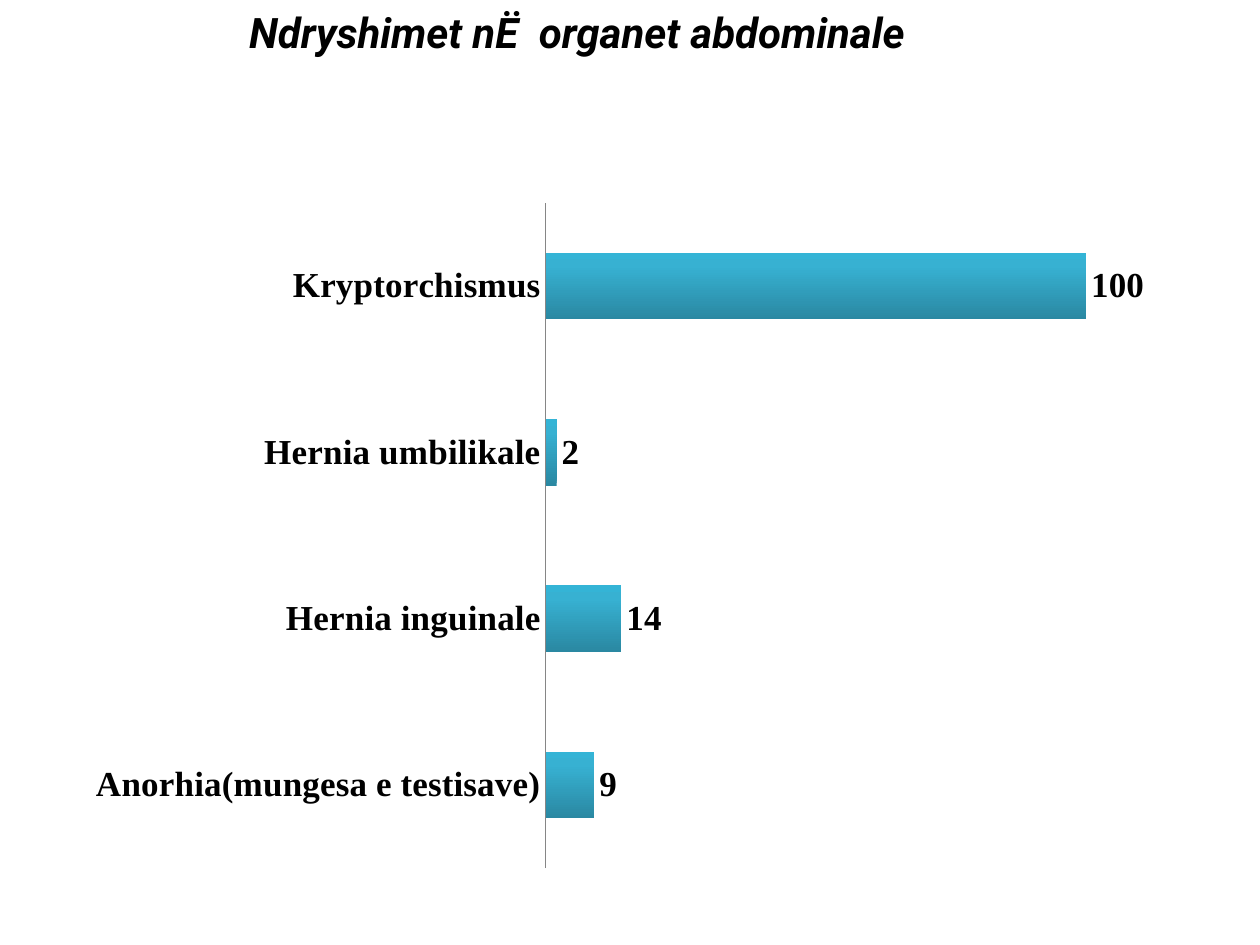
"""Build a slide with a bar chart of changes found in the abdominal organs."""
from copy import deepcopy

from pptx import Presentation
from pptx.chart.data import CategoryChartData
from pptx.dml.color import RGBColor
from pptx.enum import chart as ch, text
from pptx.util import Inches, Pt

BLACK = RGBColor(0x00, 0x00, 0x00)
AXIS_GRAY = RGBColor(0x86, 0x86, 0x86)
BAR_GRADIENT = [
    (0, RGBColor(0x2A, 0x88, 0xA2)),
    (0.8, RGBColor(0x37, 0xB1, 0xD2)),
    (1, RGBColor(0x34, 0xB4, 0xD6)),
]
FINDINGS = {
    "Anorhia(mungesa e testisave)": 9,
    "Hernia inguinale": 14,
    "Hernia umbilikale": 2,
    "Kryptorchismus": 100,
}


class SlideBuilder:
    title_font = "Roboto"
    label_font = "Times New Roman"
    chart_font = "Calibri"

    def __init__(self, slide):
        self.slide = slide

    def style(self, font, name, size, bold=False, italic=False):
        font.name, font.size = name, Pt(size)
        font.bold, font.italic = bold, italic
        font.color.rgb = BLACK

    def title(self, wording, left, top, width, height):
        heading = self.slide.shapes.title
        heading.left, heading.top = Inches(left), Inches(top)
        heading.width, heading.height = Inches(width), Inches(height)
        frame = heading.text_frame
        frame.text = wording
        frame.vertical_anchor = text.MSO_ANCHOR.TOP
        frame.auto_size = text.MSO_AUTO_SIZE.NONE
        paragraph = frame.paragraphs[0]
        paragraph.alignment = text.PP_ALIGN.CENTER
        self.style(paragraph.font, self.title_font, 24, bold=True, italic=True)

    def gradient(self, series, stops):
        fill = series.format.fill
        fill.gradient()
        fill.gradient_angle = 90
        stop_list = series._element.xpath(".//a:gsLst")[0]
        while len(stop_list) < len(stops):
            stop_list.append(deepcopy(stop_list[-1]))
        for stop, (position, color) in zip(fill.gradient_stops, stops):
            stop.position = position
            stop.color.rgb = color

    def bar_chart(self, values, left, top, width, height):
        data = CategoryChartData()
        data.categories = list(values)
        data.add_series("Series 1", list(values.values()))
        chart = self.slide.shapes.add_chart(
            ch.XL_CHART_TYPE.BAR_CLUSTERED,
            Inches(left), Inches(top), Inches(width), Inches(height), data,
        ).chart
        chart.has_title = chart.has_legend = False
        self.style(chart.font, self.chart_font, 10)

        categories = chart.category_axis
        categories.major_tick_mark = ch.XL_TICK_MARK.NONE
        categories.has_major_gridlines = False
        categories.format.line.color.rgb = AXIS_GRAY
        categories.format.line.width = Pt(0.75)
        self.style(categories.tick_labels.font, self.label_font, 20, bold=True)
        chart.value_axis.visible = False
        chart.value_axis.has_major_gridlines = False

        plot = chart.plots[0]
        plot.gap_width, plot.overlap = 150, -25
        plot.vary_by_categories = False
        plot.has_data_labels = True
        labels = plot.data_labels
        labels.show_value = True
        labels.position = ch.XL_LABEL_POSITION.OUTSIDE_END
        self.style(labels.font, self.label_font, 20, bold=True)
        self.gradient(plot.series[0], BAR_GRADIENT)


def main():
    deck = Presentation()
    deck.slide_width, deck.slide_height = Inches(10), Inches(7.5)
    builder = SlideBuilder(deck.slides.add_slide(deck.slide_layouts[5]))
    builder.title("Ndryshimet nË  organet abdominale", 0, 0, 9.16, 0.5)
    builder.bar_chart(FINDINGS, 0.58, 1.5, 9.08, 5.5)
    deck.save("out.pptx")


if __name__ == "__main__":
    main()
